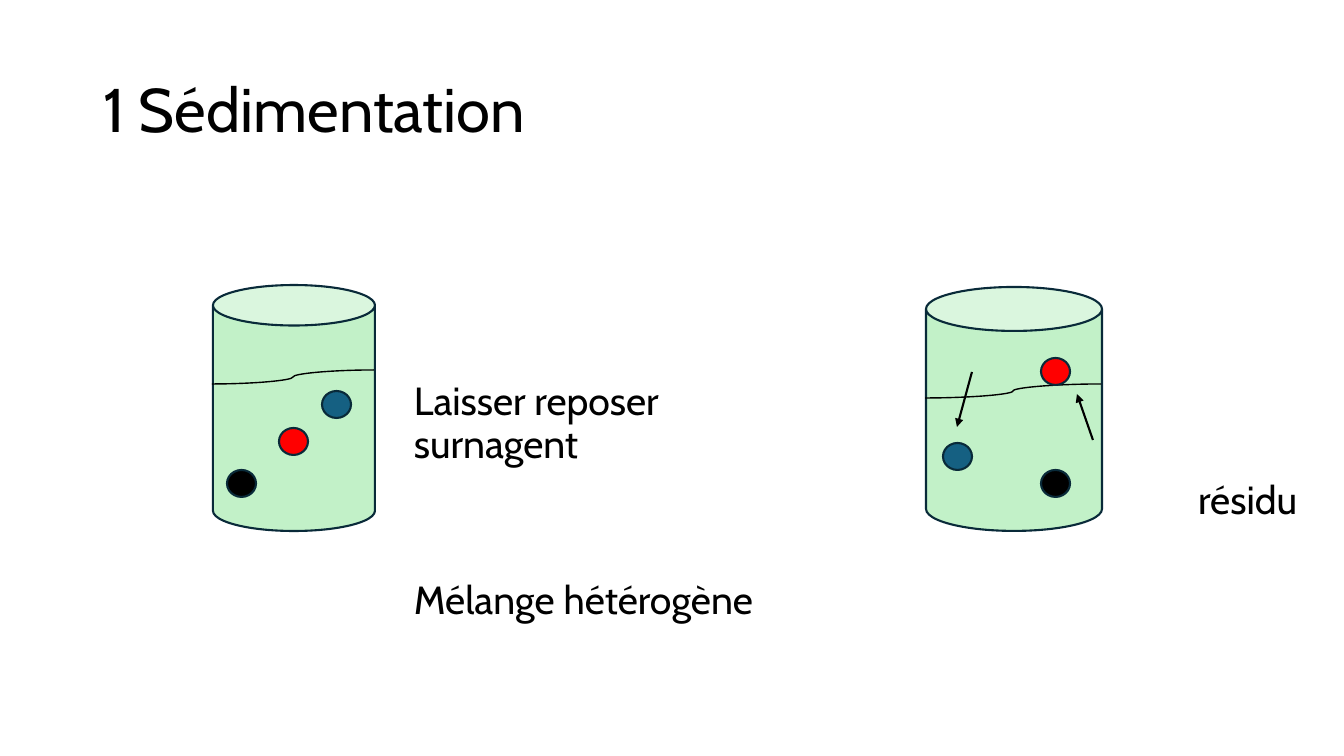
import pptx
import pptx.dml.color
import pptx.enum.shapes
import pptx.enum.text
import pptx.oxml
import pptx.oxml.ns
import pptx.util
from dataclasses import dataclass

SHAPE = pptx.enum.shapes.MSO_SHAPE
CONNECTOR = pptx.enum.shapes.MSO_CONNECTOR
ALIGN = pptx.enum.text.PP_ALIGN


@dataclass(frozen=True)
class Theme:
    font: str = "Cabin"
    ink: str = "000000"
    liquid: str = "C2F1C8"
    outline: str = "092A39"
    red: str = "FF0000"
    blue: str = "156082"
    title_size: int = 44
    body_size: int = 28
    thin: float = 1
    thick: float = 1.5


THEME = Theme()
GRAIN_WIDTH, GRAIN_HEIGHT = 29, 27


def px(*lengths):
    """Turn px (100.8 to the inch) into EMU."""
    return [pptx.util.Emu(round(length * 914400 / 100.8)) for length in lengths]


def rgb(code):
    return pptx.dml.color.RGBColor.from_string(code)


def apply(target, values):
    for name, value in values.items():
        setattr(target, name, value)


def style_line(line, color, width):
    line.color.rgb = rgb(color)
    line.width = pptx.util.Pt(width)


def write(paragraph, text, size, **paragraph_format):
    paragraph.text = text
    apply(paragraph, {"line_spacing": 0.9, "alignment": ALIGN.LEFT, **paragraph_format})
    apply(paragraph.font, {"name": THEME.font, "size": pptx.util.Pt(size)})
    paragraph.font.color.rgb = rgb(THEME.ink)


def add_solid(slide, preset, box, fill):
    solid = slide.shapes.add_shape(preset, *px(*box))
    solid.shadow.inherit = False
    solid.fill.solid()
    solid.fill.fore_color.rgb = rgb(fill)
    style_line(solid.line, THEME.outline, THEME.thick)


def add_stroke(slide, kind, start, end, width):
    stroke = slide.shapes.add_connector(kind, *px(*start, *end))
    style_line(stroke.line, THEME.ink, width)
    pptx.oxml.ns.qn("a:effectLst")
    properties = stroke._element.spPr
    properties.append(properties.makeelement(pptx.oxml.ns.qn("a:effectLst"), {}))
    return stroke


def add_arrow(slide, start, end):
    arrow = add_stroke(slide, CONNECTOR.STRAIGHT, start, end, THEME.thick)
    outline = arrow.line._get_or_add_ln()
    outline.append(outline.makeelement(pptx.oxml.ns.qn("a:tailEnd"), {"type": "triangle"}))


def add_title(slide, box):
    title = slide.shapes.title
    apply(title, dict(zip(("left", "top", "width", "height"), px(*box))))
    apply(title.text_frame, {
        "vertical_anchor": pptx.enum.text.MSO_ANCHOR.MIDDLE,
        "auto_size": pptx.enum.text.MSO_AUTO_SIZE.NONE,
        "word_wrap": True,
    })
    write(title.text_frame.paragraphs[0], "1 Sédimentation", THEME.title_size)


def add_captions(slide, box):
    frame = slide.shapes.add_textbox(*px(*box)).text_frame
    apply(frame, {"word_wrap": True, "margin_right": px(22)[0]})
    captions = [
        ("Laisser reposer\vsurnagent", ALIGN.LEFT, 0),
        ("résidu", ALIGN.RIGHT, 10),
        ("Mélange hétérogène", ALIGN.LEFT, 41),
    ]
    for index, (text, alignment, gap) in enumerate(captions):
        paragraph = frame.add_paragraph() if index else frame.paragraphs[0]
        write(paragraph, text, THEME.body_size, alignment=alignment,
              space_before=pptx.util.Pt(gap))


def add_beaker(slide, box, surface, grains, arrows=()):
    """Draw a beaker; surface, grains and arrows are relative to its corner."""
    left, top, width, _ = box

    def inside(point):
        return left + point[0], top + point[1]

    # Container and liquid surface
    add_solid(slide, SHAPE.CAN, box, THEME.liquid)
    add_stroke(slide, CONNECTOR.CURVE, inside((-1, surface)),
               inside((width - 1, surface - 14)), THEME.thin)
    # Grains
    for color, corner in grains:
        add_solid(slide, SHAPE.OVAL, (*inside(corner), GRAIN_WIDTH, GRAIN_HEIGHT), color)
    # Directions of movement
    for start, end in arrows:
        add_arrow(slide, inside(start), inside(end))


def main():
    deck = pptx.Presentation()
    deck.slide_width, deck.slide_height = px(1344, 756)
    slide = deck.slides.add_slide(deck.slide_layouts.get_by_name("Title Only"))

    add_title(slide, (93, 40, 1159, 146))
    add_captions(slide, (404, 377, 915, 303))
    # Mixture before settling
    add_beaker(slide, (213, 285, 162, 246), 99, [
        (THEME.ink, (14, 185)), (THEME.red, (66, 143)), (THEME.blue, (109, 106))])
    # Mixture after settling
    add_beaker(slide, (926, 287, 176, 244), 111, [
        (THEME.ink, (115, 183)), (THEME.red, (115, 71)), (THEME.blue, (17, 156))],
        arrows=[((167, 153), (151, 107)), ((46, 85), (31, 140))])

    deck.save("out.pptx")


if __name__ == "__main__":
    main()
